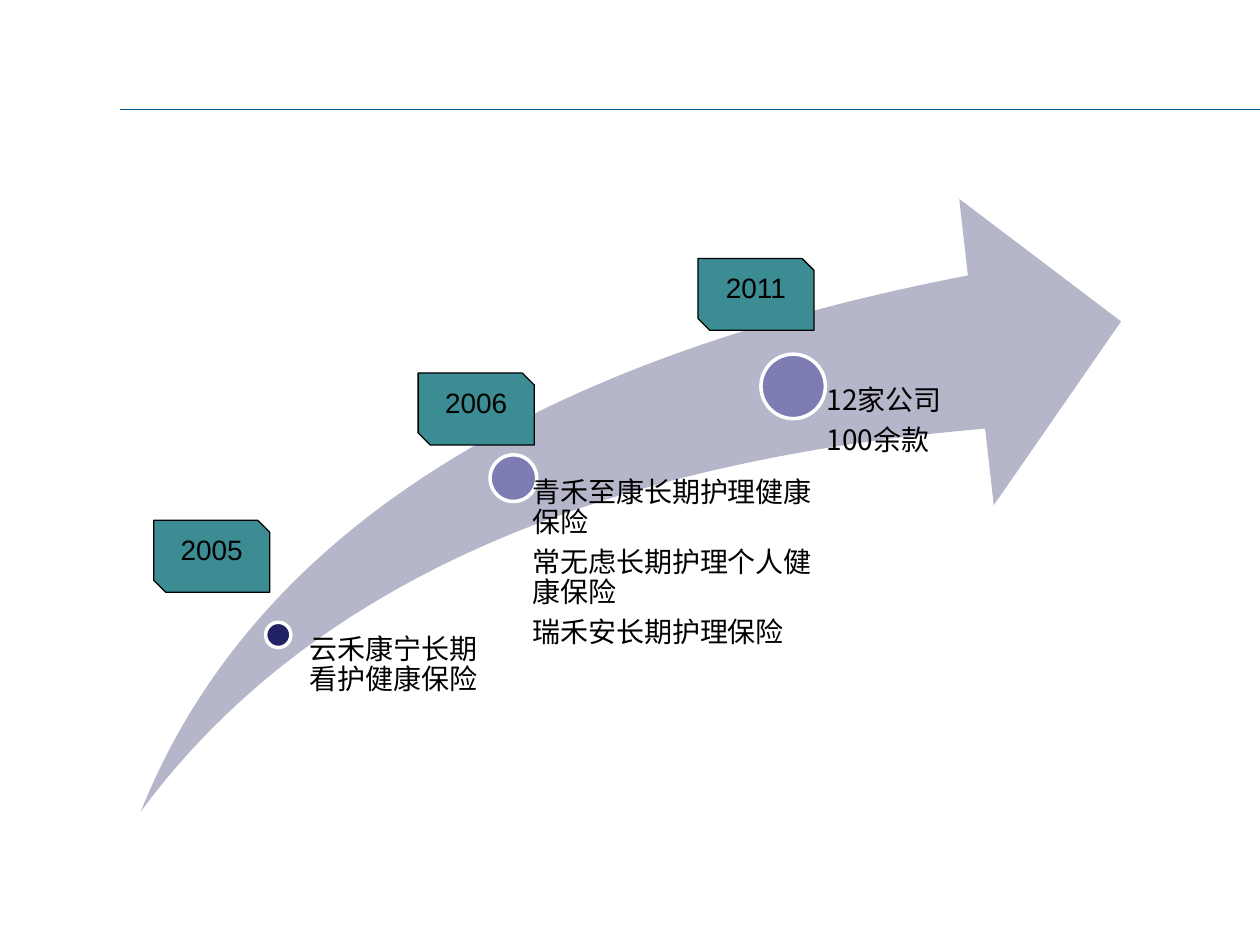
from lxml.etree import SubElement
from pptx import Presentation
from pptx.dml.color import RGBColor
from pptx.enum.shapes import MSO_CONNECTOR, MSO_SHAPE
from pptx.enum.text import MSO_ANCHOR, PP_ALIGN
from pptx.oxml.ns import qn
from pptx.util import Cm, Pt

COLORS = {
    "rule": "005A8A", "arrow": "B6B6CA", "navy": "212166", "violet": "7D7DB3",
    "tag": "3C8C93", "white": "FFFFFF", "black": "000000",
}
LATIN, HAN = "Arial", "Noto Sans CJK SC"
TAG_W, TAG_H = 2.34, 1.45

# Offsets in cm from the arrow's corner: dot is centre x, centre y, diameter;
# note is left, width, left inset
STEPS = [
    dict(year="2005", tag=(0.26, 6.48), dot=(2.77, 8.79, 0.51), fill="navy",
         note=(3.13, 3.89, 0.28), lines=["云禾康宁长期看护健康保险"]),
    dict(year="2006", tag=(5.59, 3.51), dot=(7.51, 5.63, 0.94), fill="violet",
         note=(7.42, 6.63, 0.48),
         lines=["青禾至康长期护理健康保险", "常无虑长期护理个人健康保险",
                "瑞禾安长期护理保险"]),
    dict(year="2011", tag=(11.23, 1.2), dot=(13.15, 3.78, 1.3), fill="violet",
         note=(13.14, 4.75, 0.69), lines=["12家公司", "100余款"]),
]


def color(name):
    return RGBColor.from_string(COLORS[name])


def add_form(slide, kind, box, fill, line=None, width=0):
    form = slide.shapes.add_shape(kind, *map(Cm, box))
    form.shadow.inherit = False
    form.fill.solid()
    form.fill.fore_color.rgb = color(fill)
    if line:
        form.line.color.rgb = color(line)
        form.line.width = Pt(width)
    else:
        form.line.fill.background()
    return form


def set_font(para, name):
    font = para.font
    font.size = Pt(16)
    font.color.rgb = color("black")
    font.name = name
    SubElement(font._rPr, qn("a:ea")).set("typeface", name)


def add_rule(slide, x, y, end):
    rule = slide.shapes.add_connector(
        MSO_CONNECTOR.STRAIGHT, Cm(x), Cm(y), Cm(end), Cm(y))
    rule.line.color.rgb = color("rule")
    rule.line.width = Pt(0.75)
    SubElement(rule._element.spPr, qn("a:effectLst"))


def add_tag(slide, x, y, year):
    tag = add_form(slide, MSO_SHAPE.SNIP_2_DIAG_RECTANGLE,
                   (x, y, TAG_W, TAG_H), "tag", "black")
    frame = tag.text_frame
    frame.vertical_anchor = MSO_ANCHOR.TOP
    para = frame.paragraphs[0]
    para.text = year
    para.alignment = PP_ALIGN.CENTER
    set_font(para, LATIN)


def add_note(slide, box, inset, lines):
    frame = slide.shapes.add_textbox(*map(Cm, box)).text_frame
    frame.word_wrap = True
    frame.margin_left = Cm(inset)
    frame.margin_top = frame.margin_right = frame.margin_bottom = 0
    for i, line in enumerate(lines):
        para = frame.add_paragraph() if i else frame.paragraphs[0]
        para.text = line
        para.line_spacing = 0.9
        para.space_after = Pt(5.6)
        set_font(para, HAN)


def add_path(slide, x, y, w, h):
    # Rising arrow
    arrow = add_form(slide, MSO_SHAPE.SWOOSH_ARROW, (x, y, w, h), "arrow")
    arrow.adjustments[0] = arrow.adjustments[1] = 0.25

    # Dots, with each note hanging from its dot's centre to the arrow's foot
    for step in STEPS:
        mid, top, size = step["dot"]
        add_form(slide, MSO_SHAPE.OVAL,
                 (x + mid - size / 2, y + top - size / 2, size, size),
                 step["fill"], "white", 2)
        left, wide, inset = step["note"]
        add_note(slide, (x + left, y + top, wide, h - top), inset,
                 step["lines"])

    # Year tags
    for step in STEPS:
        left, top = step["tag"]
        add_tag(slide, x + left, y + top, step["year"])


def main():
    deck = Presentation()
    deck.slide_width, deck.slide_height = Cm(25.4), Cm(19.05)
    slide = deck.slides.add_slide(deck.slide_layouts[6])
    add_rule(slide, 2.41, 2.21, 25.4)
    add_path(slide, 2.84, 4.01, 19.76, 12.35)
    deck.save("out.pptx")


if __name__ == "__main__":
    main()
